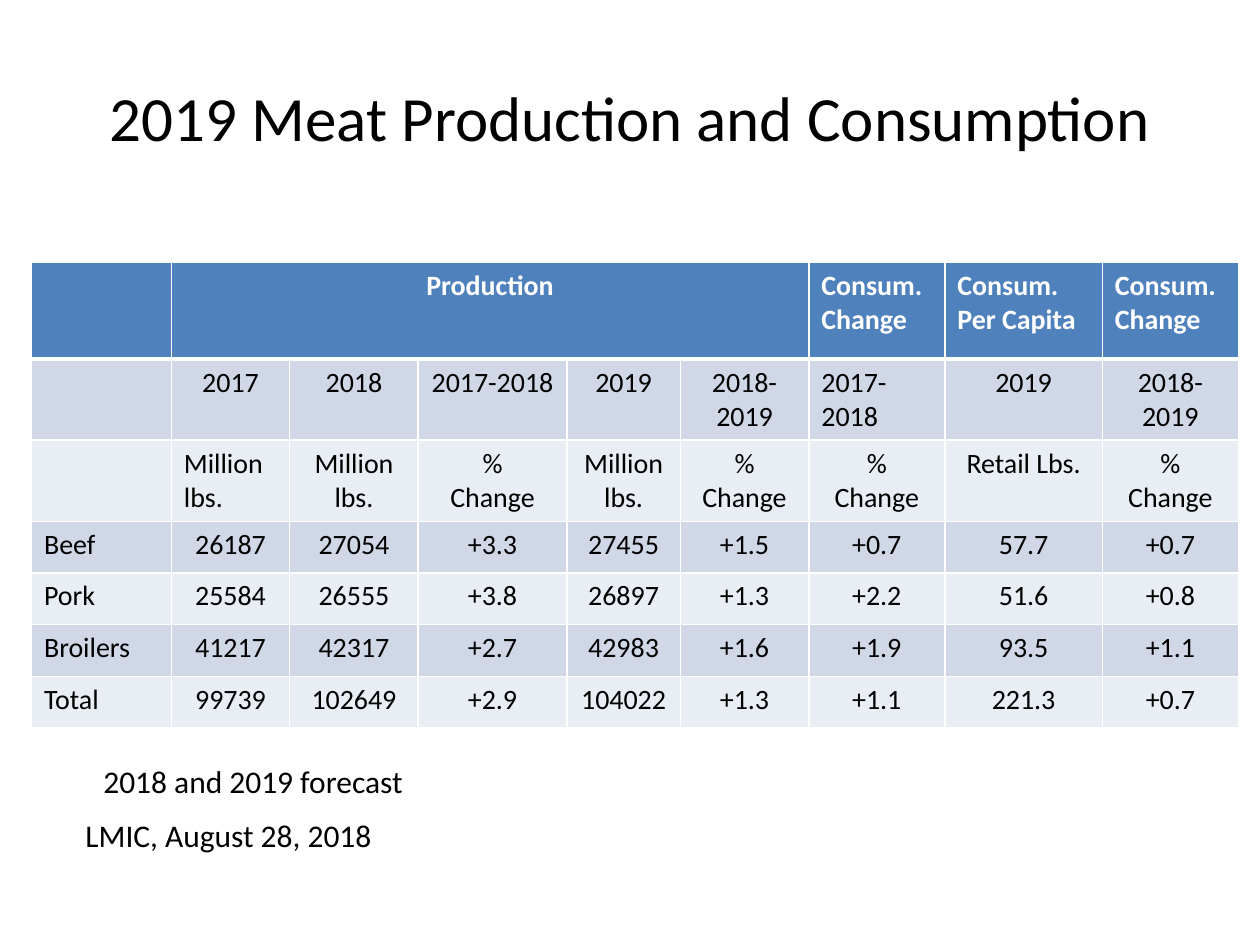
import pptx
import pptx.util
import pptx.dml.color
import pptx.enum.text
import lxml.etree

COLORS = {"header": "4F81BD", "dark_band": "D0D8E8", "light_band": "E9EDF4",
          "white": "FFFFFF", "black": "000000"}
ALIGN = pptx.enum.text.PP_ALIGN
ANCHOR = pptx.enum.text.MSO_ANCHOR

deck = pptx.Presentation()
deck.slide_width = pptx.util.Inches(10)
deck.slide_height = pptx.util.Inches(7.5)
across = deck.slide_width / 100  # one percent of the slide's width
down = deck.slide_height / 100  # one percent of the slide's height
page = deck.slides.add_slide(deck.slide_layouts[5])


def write(frame, text, size=16, color="black", bold=False, align=ALIGN.LEFT):
    """Fill a text frame, one paragraph for each line of text."""
    frame.text = text
    for para in frame.paragraphs:
        para.alignment = align
        for span in para.runs:
            span.font.name = "Calibri"
            span.font.size = pptx.util.Pt(size)
            span.font.bold = bold
            span.font.color.rgb = pptx.dml.color.RGBColor.from_string(COLORS[color])


def draw_borders(cell, top=1, bottom=1):
    """Give a cell white borders, with widths in points."""
    properties = cell._tc.get_or_add_tcPr()
    widths = {"lnL": 1, "lnR": 1, "lnT": top, "lnB": bottom}
    for position, (side, width) in enumerate(widths.items()):
        line = lxml.etree.Element(pptx.oxml.ns.qn(f"a:{side}"), w=str(pptx.util.Pt(width)))
        fill = lxml.etree.SubElement(line, pptx.oxml.ns.qn("a:solidFill"))
        lxml.etree.SubElement(fill, pptx.oxml.ns.qn("a:srgbClr"), val=COLORS["white"])
        properties.insert(position, line)


# Title
title = page.shapes.title
title.left, title.top = int(5 * across), int(4 * down)
title.width, title.height = int(90 * across), int(16.67 * down)
title.text_frame.vertical_anchor = ANCHOR.MIDDLE
write(title.text_frame, "2019 Meat Production and Consumption", size=36, align=ALIGN.CENTER)

# Table
rows = [
    ["", "Production", "", "", "", "", "Consum. Change", "Consum.\nPer Capita", "Consum.\nChange"],
    ["", "2017", "2018", "2017-2018", "2019", "2018-\n2019", "2017-2018", "2019", "2018-2019"],
    ["", "Million lbs.", "Million lbs.", "%\nChange", "Million\nlbs.", "%\nChange",
     "%\nChange", "Retail Lbs.", "%\nChange"],
    ["Beef", "26187", "27054", "+3.3", "27455", "+1.5", "+0.7", "57.7", "+0.7"],
    ["Pork", "25584", "26555", "+3.8", "26897", "+1.3", "+2.2", "51.6", "+0.8"],
    ["Broilers", "41217", "42317", "+2.7", "42983", "+1.6", "+1.9", "93.5", "+1.1"],
    ["Total", "99739", "102649", "+2.9", "104022", "+1.3", "+1.1", "221.3", "+0.7"],
]
column_shares = [11.1, 9.4, 10.2, 11.8, 9, 10.2, 10.8, 12.5, 10.8]
row_shares = [10.27] + [5.47] * (len(rows) - 1)
left_aligned = {(0, 6), (0, 7), (0, 8), (1, 6), (2, 1)}

table_frame = page.shapes.add_table(
    len(rows), len(column_shares), int(2.5 * across), int(27.73 * down),
    int(sum(column_shares) * across), int(48.8 * down))
table = table_frame.table
for column, share in zip(table.columns, column_shares):
    column.width = int(share * across)
for row, share in zip(table.rows, row_shares):
    row.height = int(share * down)
table_frame.height = int(48.8 * down)
table.cell(0, 1).merge(table.cell(0, 5))

for r, values in enumerate(rows):
    is_header = r == 0
    band = "header" if is_header else ("dark_band" if r % 2 else "light_band")
    for c, value in enumerate(values):
        cell = table.cell(r, c)
        cell.fill.solid()
        cell.fill.fore_color.rgb = pptx.dml.color.RGBColor.from_string(COLORS[band])
        draw_borders(cell, top=3 if r == 1 else 1, bottom=3 if is_header else 1)
        if value:
            is_left = c == 0 or (r, c) in left_aligned
            write(cell.text_frame, value, color="white" if is_header else "black",
                  bold=is_header, align=ALIGN.LEFT if is_left else ALIGN.CENTER)

# Notes under the table: text, left, top, width, left inset in inches
notes = [
    ("LMIC, August 28, 2018", 5.8, 85.73, 30.8, 0.1),
    ("2018 and 2019 forecast", 6.7, 80, 35.8, 0.15),
]
for text, left, top, width, inset in notes:
    box = page.shapes.add_textbox(
        int(left * across), int(top * down), int(width * across), int(5.33 * down))
    box.text_frame.word_wrap = True
    box.text_frame.margin_left = pptx.util.Inches(inset)
    write(box.text_frame, text, size=18)

deck.save("out.pptx")
